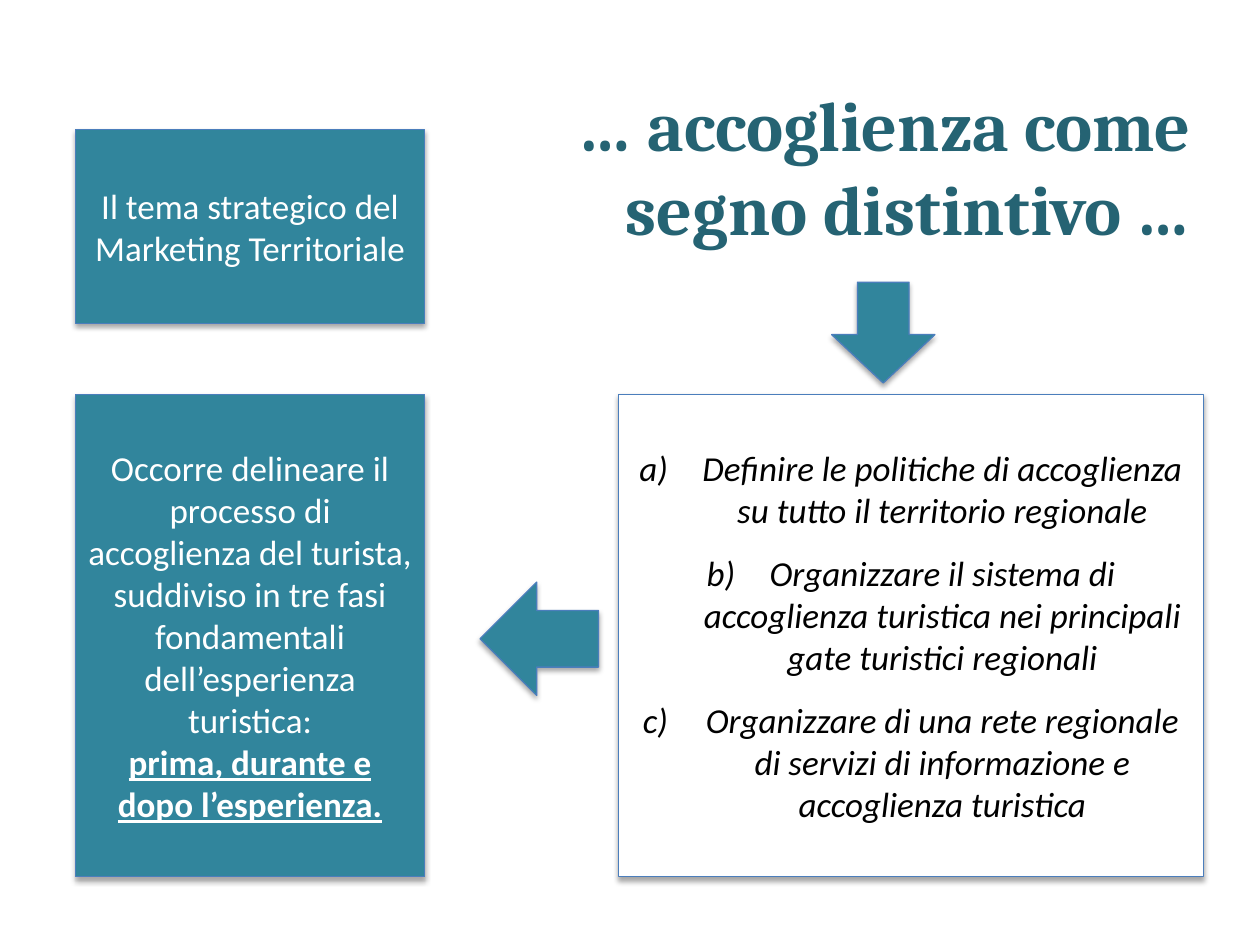
from dataclasses import dataclass

from lxml import etree
from pptx import Presentation
from pptx import util as u
from pptx.dml.color import RGBColor
from pptx.enum import shapes, text
from pptx.oxml.ns import qn


@dataclass(frozen=True)
class Theme:
    """Colours, fonts and type sizes of the slide."""
    teal: str = "31859C"
    title: str = "256373"
    outline: str = "4B7EBC"
    white: str = "FFFFFF"
    black: str = "000000"
    title_font: str = "Cambria"
    body_font: str = "Calibri"
    title_size: int = 40
    body_size: int = 20


THEME = Theme()
CENTER = text.PP_ALIGN.CENTER


def add_shadow(shape):
    """Give a shape a soft shadow that falls straight down."""
    shape.shadow.inherit = False
    effects = shape._element.spPr.find(qn("a:effectLst"))
    shadow = etree.SubElement(effects, qn("a:outerShdw"), blurRad=str(u.Pt(3.1)),
                              dist=str(u.Pt(1.8)), dir="5400000", rotWithShape="0")
    colour = etree.SubElement(shadow, qn("a:srgbClr"), val=THEME.black)
    etree.SubElement(colour, qn("a:alpha"), val="35000")


def add_panel(slide, kind, box, fill=THEME.teal):
    """Add an outlined preset shape with a shadow."""
    shape = slide.shapes.add_shape(kind, *map(u.Inches, box))
    shape.fill.solid()
    shape.fill.fore_color.rgb = RGBColor.from_string(fill)
    shape.line.color.rgb = RGBColor.from_string(THEME.outline)
    shape.line.width = u.Pt(0.75)
    add_shadow(shape)
    return shape


def write_text(paragraph, words, align=CENTER, font=THEME.body_font,
               size=THEME.body_size, colour=THEME.white, bold=False,
               italic=False, underline=False):
    """Write one formatted run into a paragraph."""
    paragraph.alignment = align
    run = paragraph.add_run()
    run.text = words
    run.font.name = font
    run.font.size = u.Pt(size)
    run.font.color.rgb = RGBColor.from_string(colour)
    run.font.bold = bold
    run.font.italic = italic
    run.font.underline = underline


def prepare_frame(shape):
    """Return a wrapped, vertically centred text frame."""
    frame = shape.text_frame
    frame.word_wrap = True
    frame.vertical_anchor = text.MSO_ANCHOR.MIDDLE
    return frame


def add_title(slide, box, words):
    """Place the right-aligned title."""
    frame = prepare_frame(slide.shapes.add_textbox(*map(u.Inches, box)))
    write_text(frame.paragraphs[0], words, align=text.PP_ALIGN.RIGHT,
               font=THEME.title_font, size=THEME.title_size,
               colour=THEME.title, bold=True)


def add_statement(slide, box, words, emphasis=None):
    """Place a teal box with a statement and an optional underlined ending."""
    frame = prepare_frame(add_panel(slide, shapes.MSO_SHAPE.RECTANGLE, box))
    write_text(frame.paragraphs[0], words)
    if emphasis:
        write_text(frame.add_paragraph(), emphasis, bold=True, underline=True)


def add_lettered_list(slide, box, items):
    """Place a white box with a lettered list."""
    panel = add_panel(slide, shapes.MSO_SHAPE.RECTANGLE, box, THEME.white)
    frame = prepare_frame(panel)
    for index, item in enumerate(items):
        paragraph = frame.add_paragraph() if index else frame.paragraphs[0]
        write_text(paragraph, item, colour=THEME.black, italic=True)
        paragraph.space_before = paragraph.space_after = u.Pt(6)
        properties = paragraph._p.get_or_add_pPr()
        indent = u.Inches(0.5)
        properties.set("marL", str(indent))
        properties.set("indent", str(-indent))
        etree.SubElement(properties, qn("a:buFont"), typeface="+mj-lt")
        etree.SubElement(properties, qn("a:buAutoNum"), type="alphaLcParenR")


def add_arrows(slide, down_box, left_box):
    """Place the arrows that lead from title to list and from list to process."""
    down = add_panel(slide, shapes.MSO_SHAPE.DOWN_ARROW, down_box)
    down.adjustments[1] = 0.48
    add_panel(slide, shapes.MSO_SHAPE.LEFT_ARROW, left_box)


def main():
    """Build and save the slide."""
    presentation = Presentation()
    presentation.slide_width = u.Inches(10)
    presentation.slide_height = u.Inches(7.5)
    slide = presentation.slides.add_slide(presentation.slide_layouts[6])

    left, left_width = 0.6, 2.77
    right, right_width = 4.91, 4.64
    lower_top, lower_height = 3.13, 3.83

    add_title(slide, (3.98, 0.27, 5.57, 2.08),
              "… accoglienza come segno distintivo …")
    add_statement(slide, (left, lower_top, left_width, lower_height),
                  "Occorre delineare il processo di accoglienza del turista, "
                  "suddiviso in tre fasi fondamentali dell’esperienza turistica:",
                  emphasis="prima, durante e dopo l’esperienza.")
    add_lettered_list(slide, (right, lower_top, right_width, lower_height), [
        "Definire le politiche di accoglienza su tutto il territorio regionale",
        "Organizzare il sistema di accoglienza turistica nei principali "
        "gate turistici regionali",
        "Organizzare di una rete regionale di servizi di informazione "
        "e accoglienza turistica",
    ])
    add_statement(slide, (left, 1.03, left_width, 1.54),
                  "Il tema strategico del Marketing Territoriale")
    add_arrows(slide, (6.6, 2.24, 0.82, 0.8), (3.81, 4.62, 0.94, 0.9))

    presentation.save("out.pptx")


if __name__ == "__main__":
    main()
